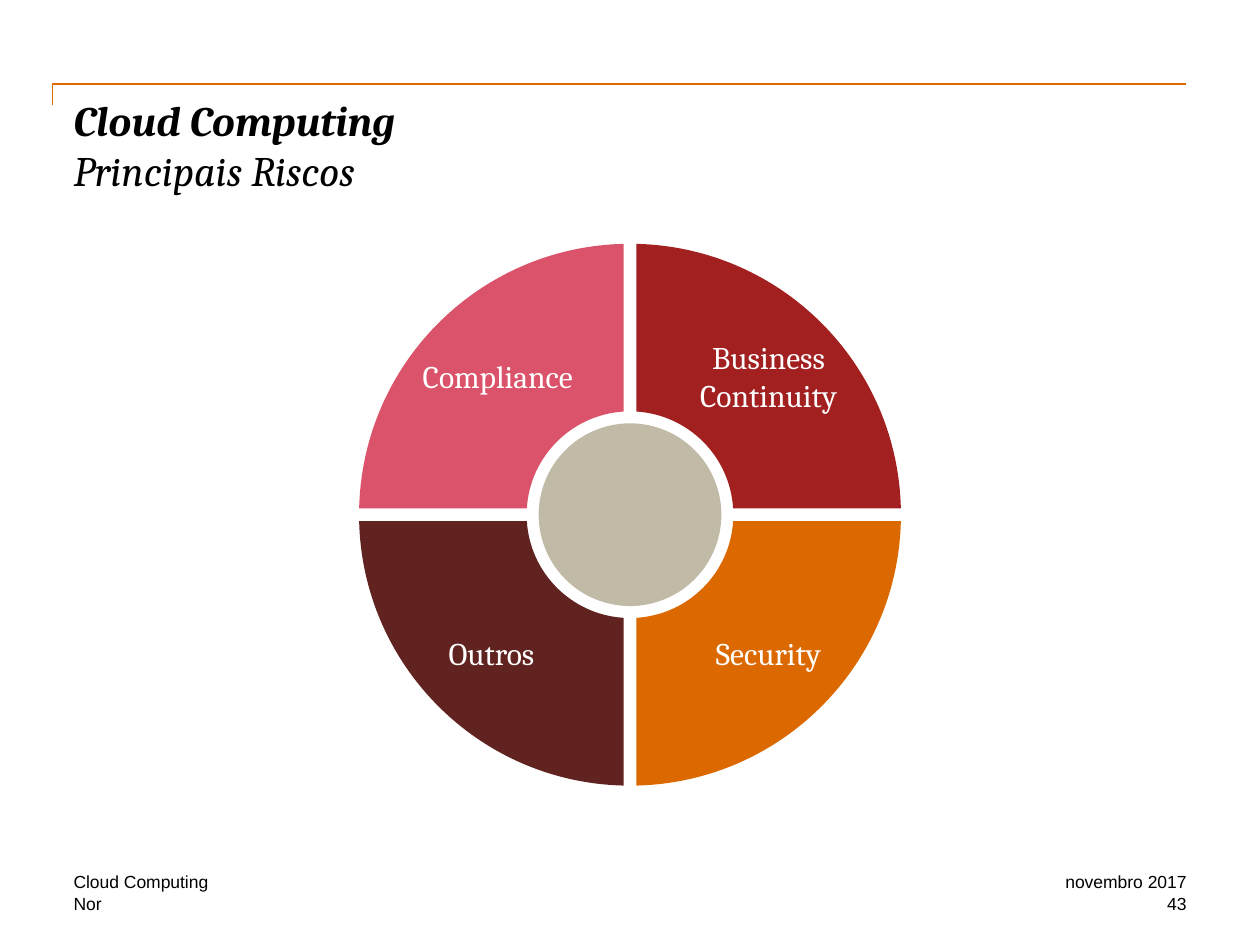
import math
from pptx import Presentation
from pptx import util as u
from pptx.dml.color import RGBColor
from pptx.enum import shapes, text
from pptx.oxml.ns import qn
from pptx.oxml.xmlchemy import OxmlElement

COLORS = {"black": "000000", "white": "FFFFFF", "orange": "DC6900", "red": "A32020",
          "rose": "DB536A", "brown": "602320", "sand": "C0BAA7"}
TITLE = [("Cloud Computing", True), ("Principais Riscos", False)]

# label, colour, horizontal side, vertical side, left inset
RISKS = [
    ("Business Continuity", "red", 1, -1, 0.1),
    ("Compliance", "rose", -1, -1, 0.2),
    ("Security", "orange", 1, 1, 0.1),
    ("Outros", "brown", -1, 1, 0.1),
]
# text, left, top, width in grid units, alignment, anchor
FOOTERS = [
    ("Nor", 7, 85, 34, text.PP_ALIGN.LEFT, text.MSO_ANCHOR.TOP),
    ("Cloud Computing", 7, 83, 69, text.PP_ALIGN.LEFT, text.MSO_ANCHOR.BOTTOM),
    ("43", 93, 85, 20, text.PP_ALIGN.RIGHT, text.MSO_ANCHOR.TOP),
    ("novembro 2017", 93, 83, 20, text.PP_ALIGN.RIGHT, text.MSO_ANCHOR.BOTTOM),
]
CX, CY = 5, (1.94 + 6.23) / 2
OUTER, INNER, HUB, GAP = 2.15, 0.82, 1.45, 0.05


def grid(n):
    """The page is laid out on twelfths of an inch."""
    return u.Inches(n / 12)


def rgb(name):
    return RGBColor.from_string(COLORS[name])


def add_run(p, content, size, font, color, bold=False, italic=False):
    r = p.add_run()
    r.text = content
    r.font.size, r.font.name = u.Pt(size), font
    r.font.bold, r.font.italic = bold, italic
    r.font.color.rgb = rgb(color)


def set_frame(tf, anchor, left=0, right=0):
    tf.word_wrap = True
    tf.auto_size = text.MSO_AUTO_SIZE.NONE
    tf.vertical_anchor = anchor
    tf.margin_left, tf.margin_right = u.Inches(left), u.Inches(right)
    tf.margin_top = tf.margin_bottom = 0


def paint(sp, color):
    sp.shadow.inherit = False
    sp.fill.solid()
    sp.fill.fore_color.rgb = rgb(color)
    sp.line.fill.background()


def arc(radius, side_x, side_y):
    """Start, two control points and end of one quadrant's Bezier arc."""
    start = math.asin(GAP / radius)
    near, far = radius * math.cos(start), GAP
    pull = 4 / 3 * math.tan((math.pi / 2 - 2 * start) / 4)
    curve = [(near, far), (near - pull * far, far + pull * near),
             (far + pull * near, near - pull * far), (far, near)]
    return [(u.Inches(CX + side_x * x), u.Inches(CY + side_y * y)) for x, y in curve]


def bend(sp):
    """Turn the two three-point runs of the outline into curves."""
    lines = list(sp._element.spPr.iter(qn("a:lnTo")))
    for group in (lines[:3], lines[4:7]):
        curve = OxmlElement("a:cubicBezTo")
        group[0].addprevious(curve)
        for line in group:
            curve.append(line[0])
            line.getparent().remove(line)


prs = Presentation()
prs.slide_width, prs.slide_height = u.Inches(10), u.Inches(7.5)
s = prs.slides.add_slide(prs.slide_layouts[5])

# Corner rule above the title
rule = s.shapes.add_connector(shapes.MSO_CONNECTOR.ELBOW, grid(113), grid(8),
                              grid(5), grid(10))
rule.line.color.rgb = rgb("orange")
rule.line.width = u.Pt(1)
sp_pr = rule._element.spPr
sp_pr.find(qn("a:prstGeom")).set("prst", "bentConnector2")
sp_pr.append(OxmlElement("a:effectLst"))

# Title
title = s.shapes.title
title.left, title.top, title.width, title.height = map(grid, (7, 9, 106, 12))
set_frame(title.text_frame, text.MSO_ANCHOR.TOP)
p = title.text_frame.paragraphs[0]
p.alignment = text.PP_ALIGN.LEFT
for i, (line, bold) in enumerate(TITLE):
    if i:
        p.add_line_break()
    add_run(p, line, 24, "Cambria", "black", bold, True)

# Footers
for content, left, top, width, align, anchor in FOOTERS:
    box = s.shapes.add_textbox(*map(grid, (left, top, width, 2)))
    set_frame(box.text_frame, anchor)
    p = box.text_frame.paragraphs[0]
    p.alignment = align
    add_run(p, content, 10, "Arial", "black")

# Risk wheel: four ring quadrants around a hub
wheel = s.shapes.add_group_shape()
for label, color, side_x, side_y, inset in RISKS:
    points = arc(OUTER, side_x, side_y) + arc(INNER, side_x, side_y)[::-1]
    builder = wheel.shapes.build_freeform(*points[0], scale=1.0)
    builder.add_line_segments(points[1:], close=True)
    sp = builder.convert_to_shape()
    bend(sp)
    paint(sp, color)
    set_frame(sp.text_frame, text.MSO_ANCHOR.MIDDLE, inset, 0.1)
    p = sp.text_frame.paragraphs[0]
    p.alignment = text.PP_ALIGN.CENTER
    add_run(p, label, 18, "Cambria", "white")

hub = wheel.shapes.add_shape(shapes.MSO_SHAPE.OVAL, u.Inches(CX - HUB / 2),
                             u.Inches(CY - HUB / 2), u.Inches(HUB), u.Inches(HUB))
paint(hub, "sand")

prs.save("out.pptx")
